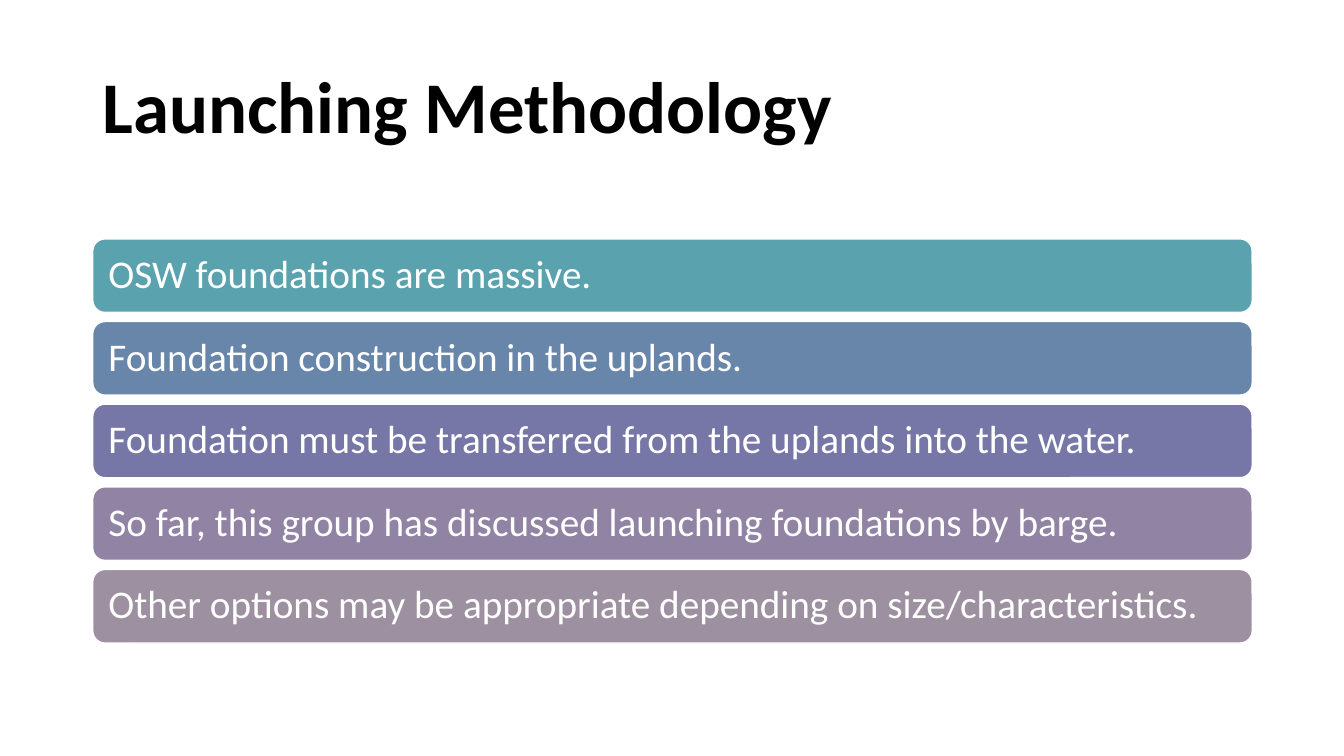
import pptx
import pptx.dml.color
import pptx.enum.shapes
import pptx.enum.text
import pptx.util

Inches = pptx.util.Inches
Pt = pptx.util.Pt

FONT = "Calibri"
COLORS = {
    "title": "000000",
    "white": "FFFFFF",
    "teal": "5AA2AE",
    "blue": "6885AA",
    "indigo": "7677A6",
    "purple": "9083A3",
    "mauve": "9D90A0",
}
POINTS = [
    ("OSW foundations are massive.", "teal"),
    ("Foundation construction in the uplands.", "blue"),
    ("Foundation must be transferred from the uplands into the water.", "indigo"),
    ("So far, this group has discussed launching foundations by barge.", "purple"),
    ("Other options may be appropriate depending on size/characteristics.", "mauve"),
]
LEFT, WIDTH = 0.92, 11.5
BAR_TOP, BAR_HEIGHT, BAR_PITCH = 2.37, 0.73, 0.82


def color(name):
    return pptx.dml.color.RGBColor.from_string(COLORS[name])


def write_text(shape, text, size, color_name, bold=False):
    frame = shape.text_frame
    frame.word_wrap = True
    frame.auto_size = pptx.enum.text.MSO_AUTO_SIZE.NONE
    frame.vertical_anchor = pptx.enum.text.MSO_ANCHOR.MIDDLE
    frame.text = text
    paragraph = frame.paragraphs[0]
    paragraph.alignment = pptx.enum.text.PP_ALIGN.LEFT
    paragraph.line_spacing = 0.9
    paragraph.space_before = Pt(0)
    paragraph.font.name = FONT
    paragraph.font.size = Pt(size)
    paragraph.font.bold = bold
    paragraph.font.color.rgb = color(color_name)


def set_title(slide, text):
    title = slide.shapes.title
    title.left, title.top = Inches(LEFT), Inches(0.34)
    title.width, title.height = Inches(WIDTH), Inches(1.51)
    write_text(title, text, 52, "title", bold=True)


def add_bar(slide, top, text, fill_name):
    bar = slide.shapes.add_shape(
        pptx.enum.shapes.MSO_SHAPE.ROUNDED_RECTANGLE,
        Inches(LEFT), Inches(top), Inches(WIDTH), Inches(BAR_HEIGHT),
    )
    bar.shadow.inherit = False
    bar.fill.solid()
    bar.fill.fore_color.rgb = color(fill_name)
    bar.line.color.rgb = color("white")
    bar.line.width = Pt(1)
    frame = bar.text_frame
    frame.margin_left = frame.margin_right = Inches(0.12)
    frame.margin_top = frame.margin_bottom = Inches(0.12)
    write_text(bar, text, 28, "white")


def main():
    presentation = pptx.Presentation()
    presentation.slide_width = Inches(13.33)
    presentation.slide_height = Inches(7.5)
    slide = presentation.slides.add_slide(presentation.slide_layouts[5])
    set_title(slide, "Launching Methodology")
    for index, (text, fill_name) in enumerate(POINTS):
        add_bar(slide, BAR_TOP + index * BAR_PITCH, text, fill_name)
    presentation.save("out.pptx")


if __name__ == "__main__":
    main()
